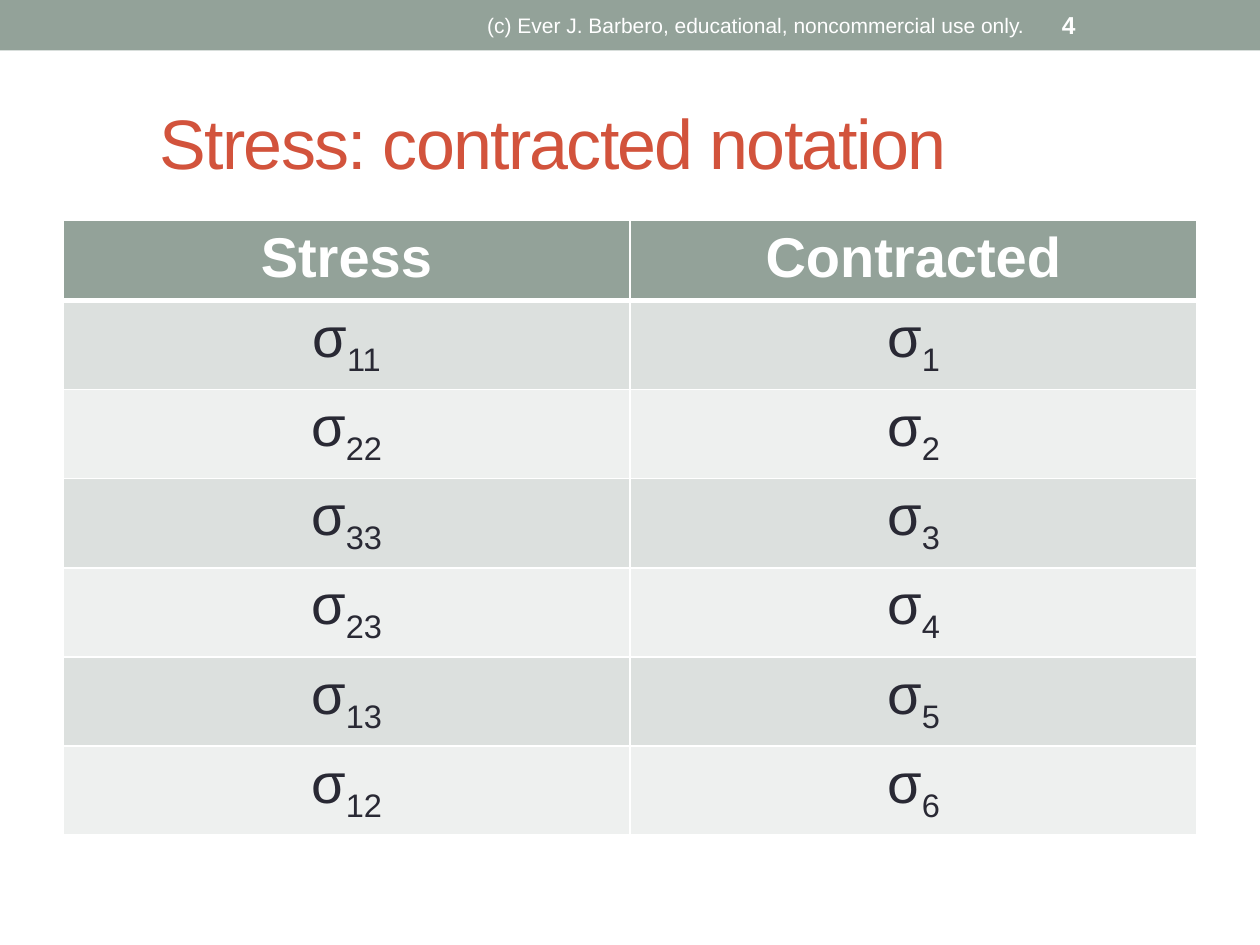
from lxml import etree
from pptx import Presentation
from pptx.dml.color import RGBColor
from pptx.enum.shapes import MSO_SHAPE
from pptx.enum.text import MSO_ANCHOR, PP_ALIGN
from pptx.oxml.ns import qn
from pptx.util import Inches, Pt

RECT = MSO_SHAPE.RECTANGLE
MIDDLE = MSO_ANCHOR.MIDDLE
LEFT, CENTER = PP_ALIGN.LEFT, PP_ALIGN.CENTER

SAGE = RGBColor(0x93, 0xA2, 0x99)
RED = RGBColor(0xD2, 0x53, 0x3C)
INK = RGBColor(0x29, 0x29, 0x34)
WHITE = RGBColor(0xFF, 0xFF, 0xFF)
BANDS = RGBColor(0xDC, 0xE0, 0xDE), RGBColor(0xEE, 0xF0, 0xEF)

HEADS = "Stress", "Contracted"
PAIRS = ("11", "22", "33", "23", "13", "12")


def style(para, size, color, bold=False, align=LEFT):
    para.alignment = align
    font = para.font
    font.name, font.size, font.bold = "Arial", Pt(size), bold
    font.color.rgb = color


def add_text(slide, box, text, size, color, **look):
    frame = slide.shapes.add_textbox(*map(Inches, box)).text_frame
    frame.word_wrap = True
    frame.vertical_anchor = MIDDLE
    para = frame.paragraphs[0]
    para.text = text
    style(para, size, color, **look)
    return para


def add_banner(slide, box):
    """Top bar with the credit line and the slide number."""
    left, top, width, height = box
    bar = slide.shapes.add_shape(RECT, *map(Inches, box))
    bar.shadow.inherit = False
    bar.fill.solid()
    bar.fill.fore_color.rgb = SAGE
    bar.line.fill.background()
    top, height = top + 0.02, height - 0.04
    add_text(slide, (left + 3.75, top, 4.5, height),
             "(c) Ever J. Barbero, educational, noncommercial use only.",
             12, WHITE, align=CENTER)
    add_text(slide, (left + 8.33, top, 1.17, height), "4", 14, WHITE, bold=True)


def add_title(slide, box):
    para = add_text(slide, box, "Stress: contracted notation", 40, RED)
    # Tighten the letters by one point
    para.runs[0].font._element.set("spc", "-100")


def add_edges(cell, widths):
    """White cell borders; widths maps each side to points."""
    props = cell._tc.get_or_add_tcPr()
    for spot, side in enumerate("LRTB"):
        line = etree.Element(qn(f"a:ln{side}"), w=str(Pt(widths[side])))
        fill = etree.SubElement(line, qn("a:solidFill"))
        etree.SubElement(fill, qn("a:srgbClr"), val=str(WHITE))
        props.insert(spot, line)


def fill_cell(cell, text, sub, row):
    head = row == 0
    para = cell.text_frame.paragraphs[0]
    style(para, 32, WHITE if head else INK, bold=head, align=CENTER)
    para.add_run().text = text
    if sub:
        run = para.add_run()
        run.text = sub
        run.font._element.set("baseline", "-25000")
    cell.fill.solid()
    cell.fill.fore_color.rgb = SAGE if head else BANDS[(row - 1) % 2]
    add_edges(cell, {"L": 1, "R": 1, "T": 3 if row == 1 else 1,
                     "B": 3 if head else 1})


def add_grid(slide, box):
    """Stress components beside their contracted names."""
    rows = [[(head, "") for head in HEADS]]
    rows += [[("σ", pair), ("σ", str(num))] for num, pair in enumerate(PAIRS, 1)]
    frame = slide.shapes.add_table(len(rows), len(HEADS), *map(Inches, box))
    table = frame.table
    for r, cells in enumerate(rows):
        table.rows[r].height = Inches(0.41)  # grows to fit the text
        for c, (text, sub) in enumerate(cells):
            fill_cell(table.cell(r, c), text, sub, r)
    frame.height = Inches(box[3])


def main():
    deck = Presentation()
    deck.slide_width, deck.slide_height = Inches(10), Inches(7.5)
    slide = deck.slides.add_slide(deck.slide_layouts[6])
    add_banner(slide, (0, 0, 10, 0.4))
    add_title(slide, (1.17, 0.58, 7.83, 1.08))
    add_grid(slide, (0.5, 1.75, 9, 4.43))
    deck.save("out.pptx")


if __name__ == "__main__":
    main()
